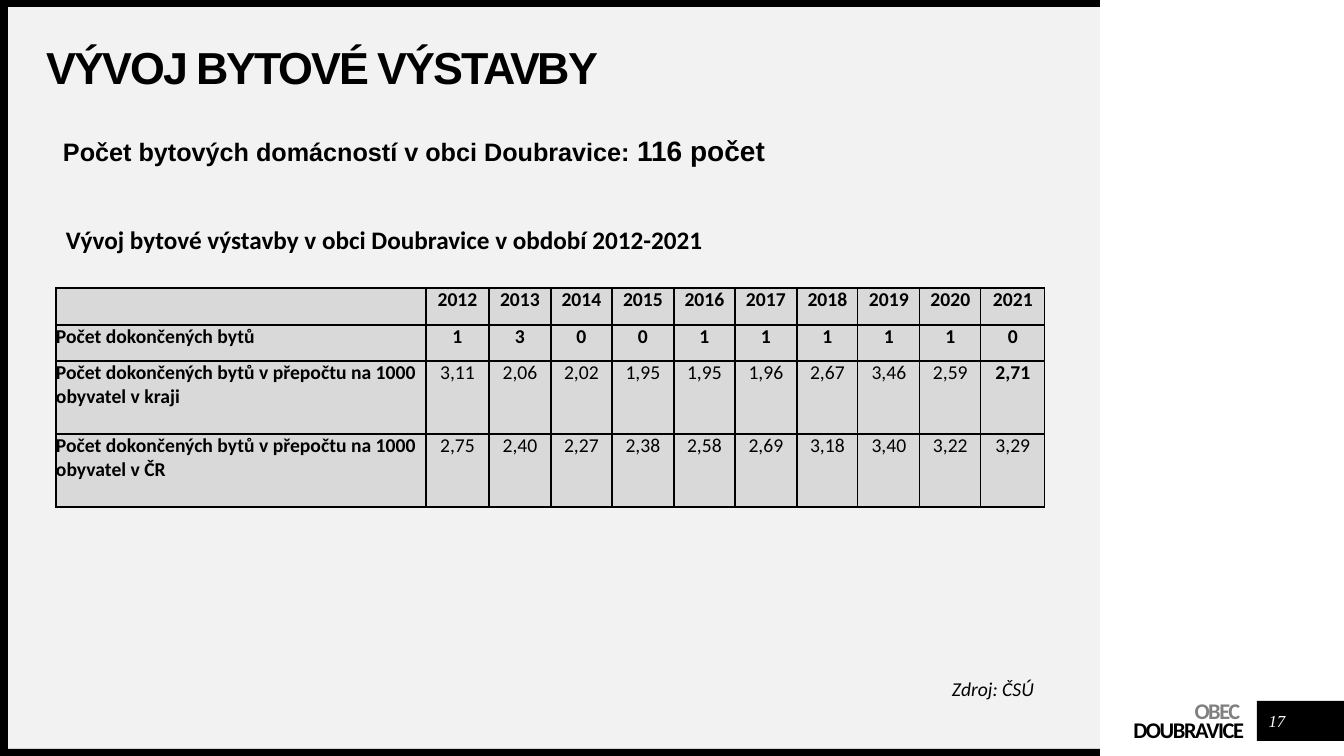
from lxml.etree import SubElement
from pptx import Presentation
from pptx.dml.color import RGBColor
from pptx.enum.shapes import MSO_SHAPE
from pptx.enum.text import MSO_ANCHOR, PP_ALIGN
from pptx.oxml.ns import qn
from pptx.util import Pt

EMU_PER_PX = 914400 / 100.8
BLACK, WHITE, GREY = "000000", "FFFFFF", "808080"
PANEL, CELL = "F2F2F2", "D9D9D9"
COLUMN_WIDTHS = [370, 63] + [62, 61] * 4 + [64]
ROW_HEIGHTS = [37, 36, 73, 73]
HOUSING_ROWS = [
    [""] + [str(year) for year in range(2012, 2022)],
    ["Počet dokončených bytů", *"1300111110"],
    ["Počet dokončených bytů v přepočtu na 1000 obyvatel v kraji",
     "3,11", "2,06", "2,02", "1,95", "1,95", "1,96", "2,67", "3,46", "2,59", "2,71"],
    ["Počet dokončených bytů v přepočtu na 1000 obyvatel v ČR",
     "2,75", "2,40", "2,27", "2,38", "2,58", "2,69", "3,18", "3,40", "3,22", "3,29"],
]


def px(length):
    """Turn pixels into EMU."""
    return round(length * EMU_PER_PX)


def color(value):
    """Turn a hex string into a colour."""
    return RGBColor.from_string(value)


def style_span(span, size, font="Calibri", fill=BLACK, bold=False, italic=False, spacing=0):
    """Format one run, with letter spacing in points."""
    span.font.size = Pt(size)
    span.font.name = font
    span.font.bold = bold
    span.font.italic = italic
    span.font.color.rgb = color(fill)
    if spacing:
        span.font._element.set("spc", str(round(spacing * 100)))


def add_block(page, box, fill):
    """Draw a plain filled rectangle."""
    block = page.shapes.add_shape(MSO_SHAPE.RECTANGLE, *map(px, box))
    block.shadow.inherit = False
    block.fill.solid()
    block.fill.fore_color.rgb = color(fill)
    block.line.fill.background()


def add_label(page, box, text, align=PP_ALIGN.LEFT, anchor=MSO_ANCHOR.TOP, wrap=True, line_spacing=None):
    """Add a text box without insets and return its paragraph."""
    frame = page.shapes.add_textbox(*map(px, box)).text_frame
    frame.margin_left = frame.margin_top = frame.margin_right = frame.margin_bottom = 0
    frame.word_wrap = wrap
    frame.vertical_anchor = anchor
    frame.text = text
    para = frame.paragraphs[0]
    para.alignment = align
    para.line_spacing = line_spacing
    return para


def add_frame(page, box):
    """Draw the grey panel with its black edges."""
    left, top, width, height = box
    add_block(page, (left + 8, top + 7, width - 8, height - 14), PANEL)
    for edge_top in (top, top + height - 7):
        add_block(page, (left, edge_top, width, 7), BLACK)
    add_block(page, (left, top, 8, height), BLACK)


def add_footer(page, box):
    """Place the municipality name and the page number."""
    left, top, width, height = box
    add_block(page, (left + 157, top + 1, width - 157, 40), BLACK)
    name = add_label(page, (left, top + 4, 144, 40), "OBEC \vDOUBRAVICE",
                     PP_ALIGN.RIGHT, line_spacing=Pt(14))
    for span, fill in zip(name.runs, (GREY, BLACK)):
        style_span(span, 16, fill=fill, bold=True, spacing=-1)
    number = add_label(page, (left + 162, top + 6, 30, 30), "17", PP_ALIGN.CENTER, MSO_ANCHOR.MIDDLE)
    style_span(number.runs[0], 12, "Times New Roman", WHITE, italic=True)


def add_headings(page, box):
    """Place the title, the household count and the table heading."""
    left, top, width, height = box
    title = add_label(page, (left, top, 646, 47), "VÝVOJ BYTOVÉ VÝSTAVBY",
                      anchor=MSO_ANCHOR.MIDDLE, line_spacing=0.9)
    style_span(title.runs[0], 32, "Arial", bold=True, spacing=-1.5)
    count = add_label(page, (left + 16, top + 90, 729, 39),
                      "Počet bytových domácností v obci Doubravice: ", line_spacing=0.9)
    count.space_before = Pt(10)
    count.add_run().text = "116 počet"
    for span, size in zip(count.runs, (18, 20)):
        style_span(span, size, "Arial", bold=True)
    heading = add_label(page, (left + 19, top + 172, width - 19, 40),
                        "Vývoj bytové výstavby v obci Doubravice v období 2012-2021",
                        anchor=MSO_ANCHOR.MIDDLE, wrap=False)
    style_span(heading.runs[0], 18, bold=True)


def add_borders(cell):
    """Give a cell thin black lines on all sides."""
    properties = cell._tc.get_or_add_tcPr()
    for side in ("lnL", "lnR", "lnT", "lnB"):
        line = SubElement(properties, qn(f"a:{side}"), w=str(Pt(1)))
        SubElement(SubElement(line, qn("a:solidFill")), qn("a:srgbClr"), val=BLACK)


def fill_cell(cell, text, align, bold):
    """Write and format one table cell."""
    cell.margin_left = cell.margin_top = cell.margin_right = cell.margin_bottom = 0
    add_borders(cell)
    cell.fill.solid()
    cell.fill.fore_color.rgb = color(CELL)
    cell.text = text
    para = cell.text_frame.paragraphs[0]
    para.alignment = align
    para.font.size = Pt(14)
    for span in para.runs:
        style_span(span, 14, bold=bold)


def add_housing_table(page, box):
    """Build the table of finished flats by year."""
    table = page.shapes.add_table(len(ROW_HEIGHTS), len(COLUMN_WIDTHS), *map(px, box)).table
    table.first_row = table.horz_banding = False
    for column, width in zip(table.columns, COLUMN_WIDTHS):
        column.width = px(width)
    for row, height in zip(table.rows, ROW_HEIGHTS):
        row.height = px(height)
    for row_index, values in enumerate(HOUSING_ROWS):
        for column_index, value in enumerate(values):
            align = PP_ALIGN.CENTER if column_index else PP_ALIGN.LEFT
            bold = row_index < 2 or column_index == 0 or value == "2,71"
            fill_cell(table.cell(row_index, column_index), value, align, bold)


def add_source_note(page, box):
    """Place the data source note."""
    note = add_label(page, box, "Zdroj: ČSÚ", anchor=MSO_ANCHOR.MIDDLE)
    style_span(note.runs[0], 14, italic=True)


def main():
    """Build and save the deck."""
    deck = Presentation()
    deck.slide_width, deck.slide_height = px(1344), px(756)
    page = deck.slides.add_slide(deck.slide_layouts[6])
    add_frame(page, (0, 0, 1100, 756))
    add_footer(page, (1100, 700, 244, 56))
    add_headings(page, (47, 47, 662, 212))
    add_housing_table(page, (56, 288, sum(COLUMN_WIDTHS), sum(ROW_HEIGHTS)))
    add_source_note(page, (952, 671, 118, 35))
    deck.save("out.pptx")


if __name__ == "__main__":
    main()
